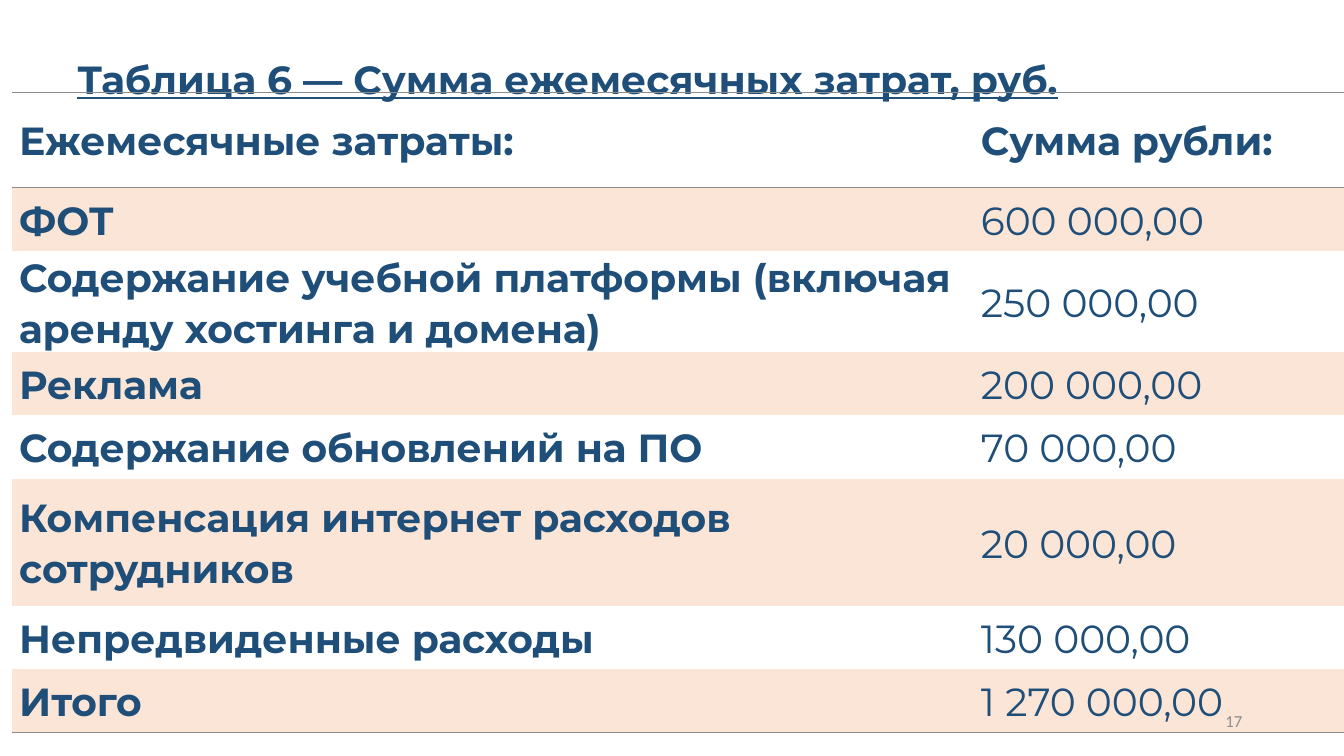
from dataclasses import dataclass

from lxml import etree
from pptx import Presentation
from pptx import util as u
from pptx.dml.color import RGBColor
from pptx.enum import text
from pptx.oxml.ns import qn


@dataclass(frozen=True)
class Theme:
    """Colours, fonts and type sizes of the slide."""
    ink: str = "1F4E79"
    band: str = "FBE5D6"
    rule: str = "8C8C8C"
    page_number: str = "8C8C8C"
    body_font: str = "Montserrat"
    number_font: str = "Calibri"
    body_size: int = 28
    number_size: int = 12


THEME = Theme()
COLUMN_WIDTHS = (9.54, 3.67)
COSTS = (
    ("Ежемесячные затраты:", "Сумма рубли:", 0.94),
    ("ФОТ", "600 000,00", 0.63),
    ("Содержание учебной платформы (включая аренду хостинга и домена)", "250 000,00", 0.94),
    ("Реклама", "200 000,00", 0.63),
    ("Содержание обновлений на ПО", "70 000,00", 0.63),
    ("Компенсация интернет расходов сотрудников", "20 000,00", 1.26),
    ("Непредвиденные расходы", "130 000,00", 0.63),
    ("Итого", "1 270 000,00", 0.63),
)


def style_text(para, font, size, color, bold=False, underline=False):
    """Format every run of a paragraph."""
    for span in para.runs:
        span.font.name = font
        span.font.size = u.Pt(size)
        span.font.color.rgb = RGBColor.from_string(color)
        span.font.bold = bold
        span.font.underline = underline


def add_label(page, words, left, top, width, height):
    """Add a vertically centred text box and return its paragraph."""
    box = page.shapes.add_textbox(*map(u.Inches, (left, top, width, height)))
    frame = box.text_frame
    frame.word_wrap = True
    frame.vertical_anchor = text.MSO_ANCHOR.MIDDLE
    frame.text = words
    return frame.paragraphs[0]


def set_borders(cell, ruled_sides):
    """Draw thin rules on the named sides and hide the others."""
    properties = cell._tc.get_or_add_tcPr()
    for side in "LRTB":
        line = etree.SubElement(properties, qn(f"a:ln{side}"), w=str(u.Pt(0.5)))
        if side in ruled_sides:
            fill = etree.SubElement(line, qn("a:solidFill"))
            etree.SubElement(fill, qn("a:srgbClr"), val=THEME.rule)
        else:
            etree.SubElement(line, qn("a:noFill"))


def fill_cell(cell, words, bold, banded, ruled_sides):
    """Write one table cell with its borders and background."""
    set_borders(cell, ruled_sides)
    if banded:
        cell.fill.solid()
        cell.fill.fore_color.rgb = RGBColor.from_string(THEME.band)
    else:
        cell.fill.background()
    cell.margin_left = cell.margin_right = u.Inches(0.07)
    cell.margin_top = cell.margin_bottom = 0
    cell.vertical_anchor = text.MSO_ANCHOR.MIDDLE
    cell.text_frame.text = words
    para = cell.text_frame.paragraphs[0]
    para.line_spacing = 1.07
    para.space_after = u.Pt(8)
    style_text(para, THEME.body_font, THEME.body_size, THEME.ink, bold)


def add_cost_table(page):
    """Add the monthly cost table with alternating bands."""
    size = (sum(COLUMN_WIDTHS), sum(row[2] for row in COSTS))
    frame = page.shapes.add_table(len(COSTS), len(COLUMN_WIDTHS),
                                  *map(u.Inches, (0.12, 0.92, *size)))
    table = frame.table
    table.first_row = table.horz_banding = False
    for column, width in zip(table.columns, COLUMN_WIDTHS):
        column.width = u.Inches(width)
    sides = {0: "TB", 1: "T", len(COSTS) - 1: "B"}
    for index, (name, amount, height) in enumerate(COSTS):
        table.rows[index].height = u.Inches(height)
        for column, words in enumerate((name, amount)):
            fill_cell(table.cell(index, column), words, bold=index == 0 or column == 0,
                      banded=index % 2 == 1, ruled_sides=sides.get(index, ""))


def main():
    """Build and save the deck."""
    deck = Presentation()
    deck.slide_width, deck.slide_height = u.Inches(13.33), u.Inches(7.5)
    page = deck.slides.add_slide(deck.slide_layouts[6])
    title = add_label(page, "Таблица 6 — Сумма ежемесячных затрат, руб.", 0.67, 0.5, 12.28, 0.56)
    style_text(title, THEME.body_font, THEME.body_size, THEME.ink, bold=True, underline=True)
    add_cost_table(page)
    number = add_label(page, "17", 9.42, 6.95, 3, 0.4)
    number.alignment = text.PP_ALIGN.RIGHT
    style_text(number, THEME.number_font, THEME.number_size, THEME.page_number)
    deck.save("out.pptx")


if __name__ == "__main__":
    main()
